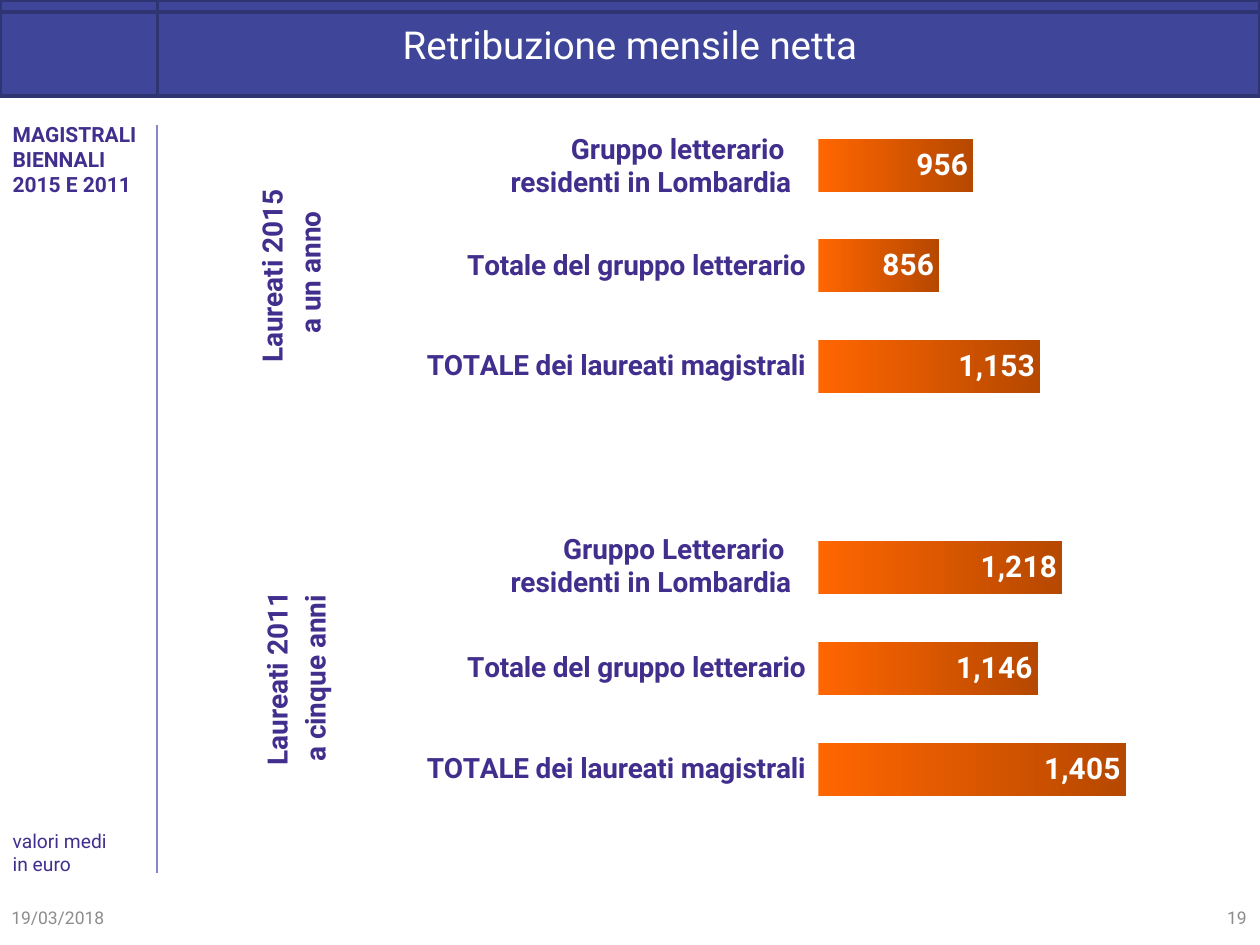
from pptx import Presentation
from pptx.chart.data import CategoryChartData
from pptx.dml.color import RGBColor
from pptx.enum.chart import XL_CHART_TYPE, XL_LABEL_POSITION, XL_TICK_MARK
from pptx.enum.shapes import MSO_CONNECTOR, MSO_SHAPE
from pptx.enum.text import MSO_ANCHOR, MSO_AUTO_SIZE, PP_ALIGN
from pptx.oxml import parse_xml
from pptx.oxml.ns import nsdecls, qn
from pptx.oxml.xmlchemy import OxmlElement
from pptx.util import Emu, Pt

LEFT, CENTER, RIGHT = PP_ALIGN.LEFT, PP_ALIGN.CENTER, PP_ALIGN.RIGHT
TOP, MIDDLE, BOTTOM = MSO_ANCHOR.TOP, MSO_ANCHOR.MIDDLE, MSO_ANCHOR.BOTTOM

FONT = "Roboto"
WHITE = RGBColor(0xFF, 0xFF, 0xFF)
HEADER_BLUE = RGBColor(0x3F, 0x46, 0x9A)
HEADER_LINE = RGBColor(0x2F, 0x34, 0x72)
RULE_BLUE = RGBColor(0x82, 0x88, 0xCC)
PURPLE = RGBColor(0x42, 0x2E, 0x8D)
GREY = RGBColor(0x8C, 0x8C, 0x8C)
ORANGE = RGBColor(0xFF, 0x66, 0x00)

WIDTH, HEIGHT = 1260, 945
PX = 914400 / 126


def px(length):
    return Emu(round(length * PX))


def place(shape, box):
    shape.left, shape.top, shape.width, shape.height = map(px, box)


def set_font(font, size, color, bold=False):
    font.name, font.size, font.bold = FONT, Pt(size), bold
    font.color.rgb = color


def write(shape, text, size, color, bold=False, align=LEFT, anchor=TOP):
    frame = shape.text_frame
    frame.word_wrap = True
    frame.auto_size = MSO_AUTO_SIZE.NONE
    frame.vertical_anchor = anchor
    frame.text = text
    paragraph = frame.paragraphs[0]
    paragraph.alignment = align
    paragraph.space_before = Pt(0)
    set_font(paragraph.font, size, color, bold)
    return paragraph


def add_text(slide, box, text, *style, **options):
    shape = slide.shapes.add_textbox(*map(px, box))
    return shape, write(shape, text, *style, **options)


def add_header(slide, box):
    band = slide.shapes.add_shape(MSO_SHAPE.FLOWCHART_INTERNAL_STORAGE, *map(px, box))
    band.shadow.inherit = False
    band.fill.solid()
    band.fill.fore_color.rgb = HEADER_BLUE
    band.line.color.rgb = HEADER_LINE
    band.line.width = Pt(2)

    title = slide.shapes.title
    place(title, box)
    paragraph = write(title, "Retribuzione mensile netta", 22, WHITE,
                      align=CENTER, anchor=MIDDLE)
    paragraph.line_spacing = Pt(22)
    # Bring the title in front of the band
    band.element.addnext(title.element)


def add_sidebar(slide, box):
    left, top, width, height = box
    rule = slide.shapes.add_connector(
        MSO_CONNECTOR.STRAIGHT, px(left + width), px(top + 10),
        px(left + width), px(top + height - 9))
    rule.line.color.rgb = RULE_BLUE
    rule.line.width = Pt(1.5)
    rule.element.spPr.append(OxmlElement("a:effectLst"))

    placeholders = {item.placeholder_format.idx: item for item in slide.placeholders}
    heading, note = placeholders[1], placeholders[3]
    place(heading, (left, top, width + 6, 49))
    write(heading, "MAGISTRALI BIENNALI 2015 E 2011", 12, PURPLE, True)
    place(note, (left, top + height - 49, width - 4, 49))
    write(note, "valori medi\vin euro", 11, PURPLE, anchor=BOTTOM)
    for index in (2, 4):
        unused = placeholders[index].element
        unused.getparent().remove(unused)


def add_pay_chart(slide, box):
    levels = ["TOTALE dei laureati magistrali", "Totale del gruppo letterario", ""]
    data = CategoryChartData(number_format="#,##0")
    data.categories = levels + [""] + levels
    data.add_series("Retribuzione", (1405, 1146, 1218, None, 1153, 856, 956))
    chart = slide.shapes.add_chart(
        XL_CHART_TYPE.BAR_CLUSTERED, *map(px, box), data).chart
    chart.has_legend = chart.has_title = False
    set_font(chart.font, 16, PURPLE, True)

    # Axes
    category_axis, value_axis = chart.category_axis, chart.value_axis
    category_axis.major_tick_mark = XL_TICK_MARK.CROSS
    category_axis.format.line.fill.background()
    set_font(category_axis.tick_labels.font, 16, PURPLE, True)
    value_axis.minimum_scale, value_axis.maximum_scale = 500, 1800
    value_axis.major_unit = 200
    value_axis.has_major_gridlines = False
    value_axis.visible = False

    # Bars, shading from orange to its dark shade
    plot = chart.plots[0]
    plot.gap_width = 90
    plot.vary_by_categories = False
    fill = plot.series[0].format.fill
    fill.gradient()
    fill.gradient_angle = 0
    for stop in fill.gradient_stops:
        stop.color.rgb = ORANGE
    dark_stop = chart.element.findall(".//" + qn("a:gs"))[-1]
    dark_stop[0].append(parse_xml(f'<a:shade {nsdecls("a")} val="46275"/>'))

    # Value labels
    plot.has_data_labels = True
    labels = plot.data_labels
    labels.show_value = True
    labels.position = XL_LABEL_POSITION.INSIDE_END
    labels.number_format, labels.number_format_is_linked = "#,##0", False
    set_font(labels.font, 17, WHITE, True)

    # Fixed inner plot area
    plot_area = chart.element.find(".//" + qn("c:plotArea"))
    for layout in plot_area.findall(qn("c:layout")):
        plot_area.remove(layout)
    plot_area.insert(0, parse_xml(
        f'<c:layout {nsdecls("c")}><c:manualLayout><c:layoutTarget val="inner"/>'
        '<c:xMode val="edge"/><c:yMode val="edge"/><c:x val="0.558"/><c:y val="0"/>'
        '<c:w val="0.414"/><c:h val="0.98"/></c:manualLayout></c:layout>'))


def add_group_labels(slide, box, cohort, group):
    left, top = box[:2]
    cohort_left, cohort_top, cohort_text = cohort
    shape, paragraph = add_text(
        slide, (left + cohort_left, top + cohort_top, 213, 81),
        cohort_text, 16, PURPLE, True, align=CENTER)
    shape.rotation = 270
    paragraph.line_spacing = 1.13
    add_text(slide, (left + 234, top, 392, 81), group, 16, PURPLE, True, align=RIGHT)


def add_footer(slide, box):
    left, top, width, height = box
    field = 294
    add_text(slide, (left, top, field, height), "19/03/2018", 10, GREY, anchor=MIDDLE)
    add_text(slide, (left + width - field, top, field, height), "19", 10, GREY,
             align=RIGHT, anchor=MIDDLE)


def main():
    presentation = Presentation()
    presentation.slide_width, presentation.slide_height = px(WIDTH), px(HEIGHT)
    comparison_layout = presentation.slide_layouts[4]
    slide = presentation.slides.add_slide(comparison_layout)
    add_sidebar(slide, (0, 115, 157, 767))
    add_header(slide, (0, 0, WIDTH, 96))
    add_pay_chart(slide, (223, 115, 1067, 719))
    add_group_labels(slide, (178, 125, 626, 300), (0, 107, "Laureati 2015 \va un anno"),
                     "Gruppo letterario \vresidenti in Lombardia")
    add_group_labels(slide, (178, 525, 626, 300), (5, 113, "Laureati 2011\va cinque anni"),
                     "Gruppo Letterario \vresidenti in Lombardia")
    add_footer(slide, (-1, 893, WIDTH, 50))
    presentation.save("out.pptx")


if __name__ == "__main__":
    main()
